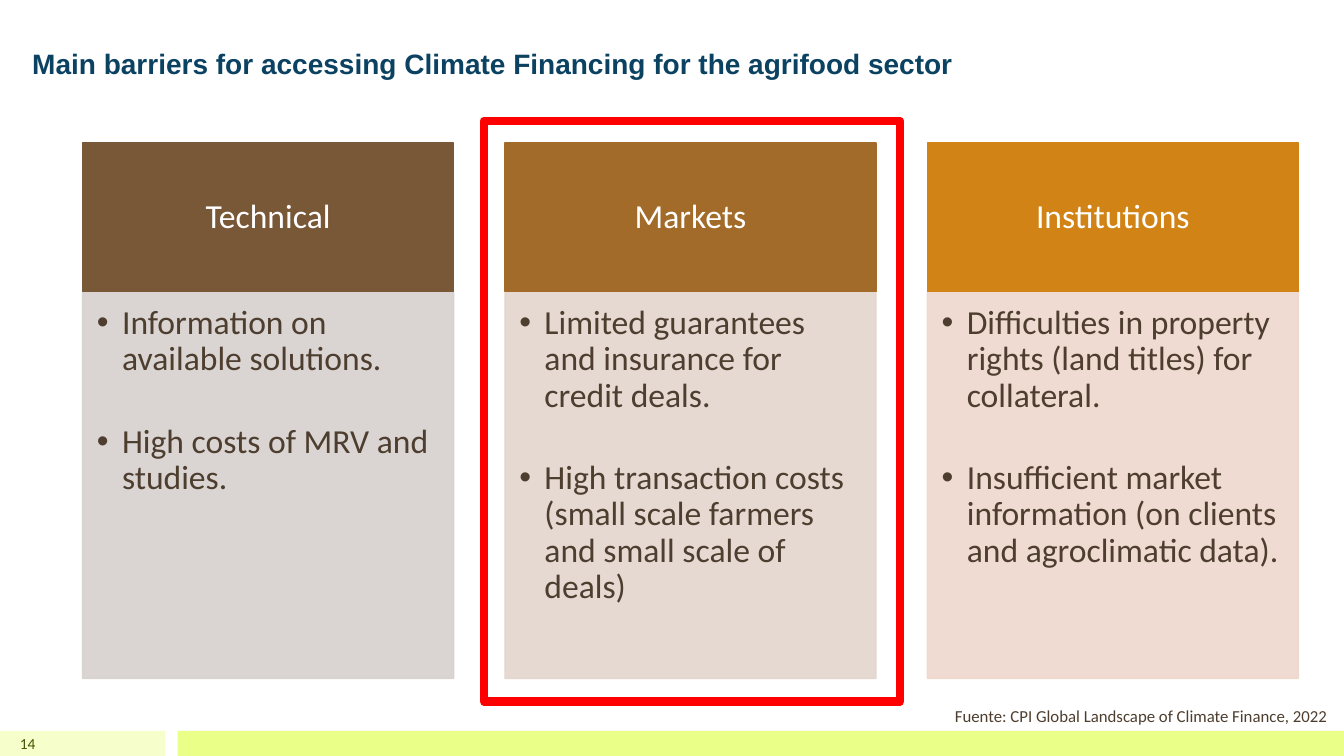
"""Build the slide on barriers to climate financing in the agrifood sector."""
from lxml import etree
from pptx import Presentation
from pptx.dml.color import RGBColor
from pptx.enum import shapes, text
from pptx.oxml import ns
from pptx.util import Pt

WHITE = RGBColor(0xFF, 0xFF, 0xFF)
NAVY = RGBColor(0x0B, 0x42, 0x62)
BROWN = RGBColor(0x4D, 0x3E, 0x2F)
OLIVE = RGBColor(0x45, 0x55, 0x00)
RED = RGBColor(0xFF, 0x00, 0x00)
PALE_LIME = RGBColor(0xF6, 0xFF, 0xCC)
LIME = RGBColor(0xE9, 0xFF, 0x88)

BARRIERS = [
    ("Technical", RGBColor(0x79, 0x58, 0x37), RGBColor(0xD7, 0xD1, 0xCE),
     ["Information on available solutions.",
      "High costs of MRV and studies."]),
    ("Markets", RGBColor(0xA2, 0x6B, 0x29), RGBColor(0xE3, 0xD5, 0xCC),
     ["Limited guarantees and insurance for credit deals.",
      "High transaction costs (small scale farmers and small scale of deals)"]),
    ("Institutions", RGBColor(0xD1, 0x83, 0x16), RGBColor(0xEE, 0xD8, 0xCC),
     ["Difficulties in property rights (land titles) for collateral.",
      "Insufficient market information (on clients and agroclimatic data)."]),
]
COLUMN_LEFT, COLUMN_PITCH, COLUMN_WIDTH = 59, 301.7, 265
HEADING_TOP, HEADING_HEIGHT, LIST_HEIGHT = 102.2, 105.9, 276.5


def place(box, left, top, width, height):
    box.left, box.top, box.width, box.height = map(Pt, (left, top, width, height))


def set_insets(frame, left, top, right, bottom):
    frame.margin_left, frame.margin_top = Pt(left), Pt(top)
    frame.margin_right, frame.margin_bottom = Pt(right), Pt(bottom)


def set_font(paragraph, size, color, name="Calibri", bold=False):
    font = paragraph.font
    font.name, font.size, font.bold = name, Pt(size), bold
    font.color.rgb = color


def paint(box, color, line_width=1):
    box.fill.solid()
    box.fill.fore_color.rgb = color
    box.line.color.rgb = color
    box.line.width = Pt(line_width)


def add_block(slide, left, top, width, height):
    block = slide.shapes.add_shape(
        shapes.MSO_SHAPE.RECTANGLE, Pt(left), Pt(top), Pt(width), Pt(height))
    block.shadow.inherit = False
    return block


def add_band(slide, left, width, color):
    band = add_block(slide, left, 522, width, 18)
    paint(band, color)
    band.line.fill.background()


def add_label(slide, wording, left, top, width, height, size, color):
    label = slide.shapes.add_textbox(Pt(left), Pt(top), Pt(width), Pt(height))
    label.text_frame.word_wrap = True
    paragraph = label.text_frame.paragraphs[0]
    paragraph.text = wording
    set_font(paragraph, size, color)
    return label


def set_title(title, wording):
    place(title, 15.8, 18, 944.2, 42.5)
    frame = title.text_frame
    frame.auto_size = text.MSO_AUTO_SIZE.NONE
    frame.vertical_anchor = text.MSO_ANCHOR.BOTTOM
    paragraph = frame.paragraphs[0]
    paragraph.text = wording
    paragraph.alignment = text.PP_ALIGN.LEFT
    set_font(paragraph, 20, NAVY, "Arial", True)


def add_heading(slide, wording, left, color):
    heading = add_block(slide, left, HEADING_TOP, COLUMN_WIDTH, HEADING_HEIGHT)
    paint(heading, color)
    frame = heading.text_frame
    frame.word_wrap = True
    frame.vertical_anchor = text.MSO_ANCHOR.MIDDLE
    set_insets(frame, 13.5, 7.7, 13.5, 7.7)
    paragraph = frame.paragraphs[0]
    paragraph.text = wording
    paragraph.alignment = text.PP_ALIGN.CENTER
    paragraph.line_spacing = 0.9
    set_font(paragraph, 24, WHITE)


def add_bullet(paragraph):
    properties = paragraph._p.get_or_add_pPr()
    properties.set("marL", str(Pt(18)))
    properties.set("indent", str(-Pt(18)))
    etree.SubElement(properties, ns.qn("a:buFont"), typeface="Arial")
    etree.SubElement(properties, ns.qn("a:buChar"), char="•")


def set_list(body, items, left, color):
    place(body, left, HEADING_TOP + HEADING_HEIGHT, COLUMN_WIDTH, LIST_HEIGHT)
    paint(body, color)
    for tint in body._element.spPr.iter(ns.qn("a:srgbClr")):
        etree.SubElement(tint, ns.qn("a:alpha"), val="90000")
    frame = body.text_frame
    frame.word_wrap = True
    frame.auto_size = text.MSO_AUTO_SIZE.NONE
    frame.vertical_anchor = text.MSO_ANCHOR.TOP
    set_insets(frame, 10.2, 10.2, 13.5, 15.4)
    frame.text = "\n".join(items)
    for index, paragraph in enumerate(frame.paragraphs):
        add_bullet(paragraph)
        paragraph.line_spacing = 0.9
        paragraph.space_before = Pt(33 if index else 0)
        paragraph.space_after = Pt(0)
        set_font(paragraph, 24, BROWN)


def add_highlight(slide):
    highlight = add_block(slide, 345.6, 86.4, 297.4, 414.7)
    highlight.fill.background()
    highlight.line.color.rgb = RED
    highlight.line.width = Pt(6)


def main():
    deck = Presentation()
    deck.slide_width, deck.slide_height = Pt(960), Pt(540)
    slide = deck.slides.add_slide(deck.slide_layouts.get_by_name("Comparison"))
    title, *bodies, spare = slide.placeholders
    spare._element.getparent().remove(spare._element)

    add_band(slide, 0, 118, PALE_LIME)
    add_band(slide, 126.8, 833.2, LIME)
    set_title(title, "Main barriers for accessing Climate Financing for the agrifood sector")
    number = add_label(slide, "14", 0, 522, 32.4, 18, 11, OLIVE)
    number.text_frame.vertical_anchor = text.MSO_ANCHOR.MIDDLE
    number.text_frame.paragraphs[0].alignment = text.PP_ALIGN.RIGHT
    add_label(slide, "Fuente: CPI Global Landscape of Climate Finance, 2022",
              675, 500.4, 285, 21.8, 12, BROWN)

    for column, (barrier, body) in enumerate(zip(BARRIERS, bodies)):
        heading, dark, light, items = barrier
        left = COLUMN_LEFT + column * COLUMN_PITCH
        add_heading(slide, heading, left, dark)
        set_list(body, items, left, light)
    add_highlight(slide)
    deck.save("out.pptx")


if __name__ == "__main__":
    main()
